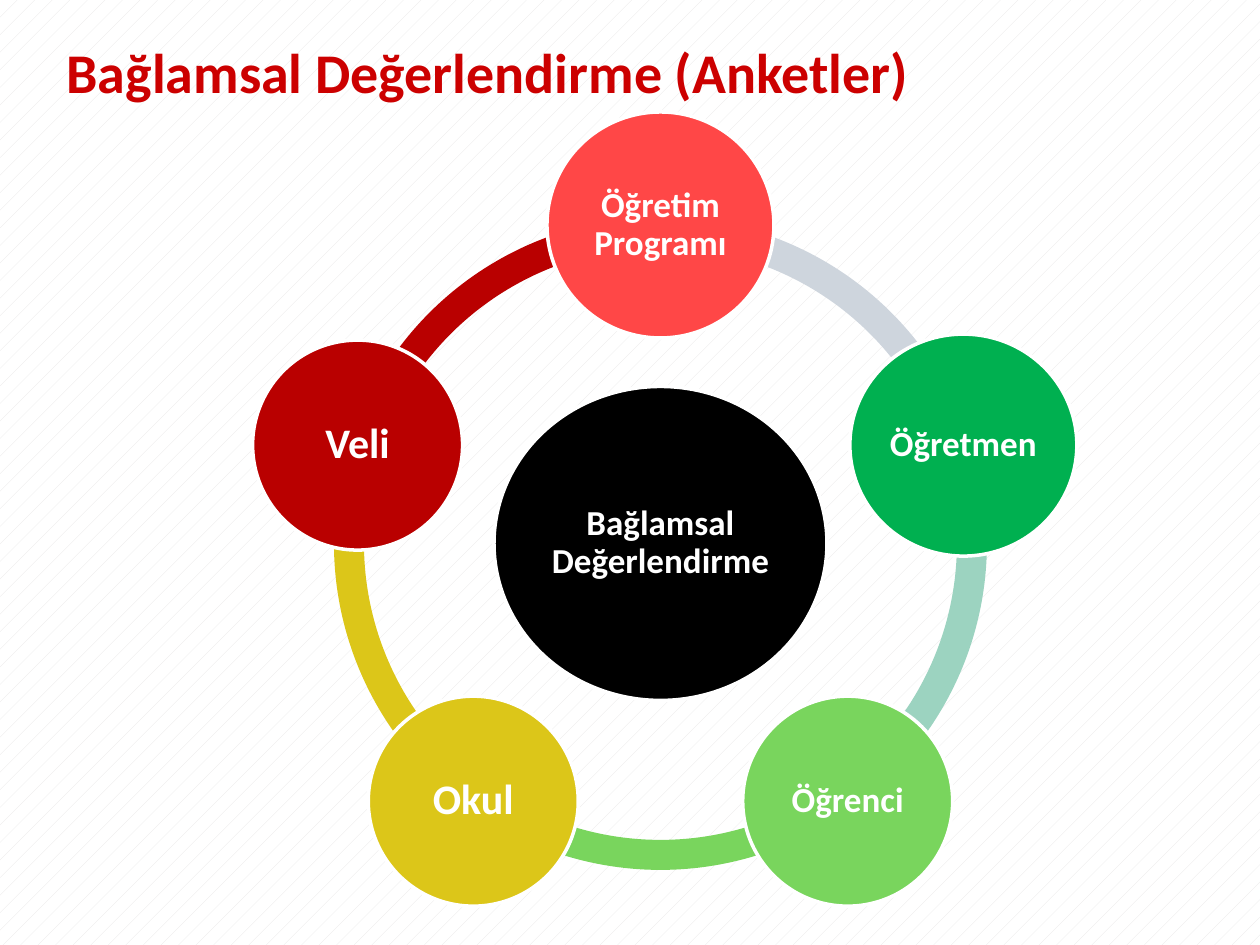
from math import cos, radians, sin

from pptx import Presentation
from pptx.dml.color import RGBColor
from pptx.enum.dml import MSO_PATTERN
from pptx.enum.shapes import MSO_SHAPE
from pptx.enum.text import MSO_ANCHOR, MSO_AUTO_SIZE, PP_ALIGN
from pptx.util import Pt

PX = 914400 / 126
FONT = "Calibri"
OVAL, ARC = MSO_SHAPE.OVAL, MSO_SHAPE.BLOCK_ARC
MIDDLE, LEFT, CENTER = MSO_ANCHOR.MIDDLE, PP_ALIGN.LEFT, PP_ALIGN.CENTER

WHITE = RGBColor(0xFF, 0xFF, 0xFF)
BLACK = RGBColor(0x00, 0x00, 0x00)
PALE_GRAY = RGBColor(0xE7, 0xE6, 0xE6)
TITLE_RED = RGBColor(0xCC, 0x00, 0x00)
CORAL = RGBColor(0xFF, 0x47, 0x47)
GREEN = RGBColor(0x00, 0xB0, 0x50)
LIME = RGBColor(0x79, 0xD5, 0x5D)
YELLOW = RGBColor(0xDC, 0xC6, 0x19)
DARK_RED = RGBColor(0xB9, 0x00, 0x00)
MINT = RGBColor(0x9C, 0xD3, 0xC0)
SILVER = RGBColor(0xCE, 0xD5, 0xDD)

# Clockwise from the top: label, width, height, text size, fill, arc to the next
NODES = [
    ("Öğretim Programı", 227, 226, 20, CORAL, SILVER),
    ("Öğretmen", 227, 222, 20, GREEN, MINT),
    ("Öğrenci", 210, 210, 20, LIME, LIME),
    ("Okul", 210, 210, 24, YELLOW, YELLOW),
    ("Veli", 210, 210, 24, DARK_RED, DARK_RED),
]


def px(*lengths):
    return [round(length * PX) for length in lengths]


def write(frame, text, size, color, align):
    frame.text = text
    frame.word_wrap = True
    frame.auto_size = MSO_AUTO_SIZE.NONE
    frame.vertical_anchor = MIDDLE
    para = frame.paragraphs[0]
    para.alignment = align
    para.line_spacing = 0.9
    font = para.runs[0].font
    font.name, font.size, font.bold = FONT, Pt(size), True
    font.color.rgb = color


def add_filled(group, kind, center_x, center_y, width, height, color):
    shape = group.shapes.add_shape(
        kind, *px(center_x - width / 2, center_y - height / 2, width, height))
    shape.shadow.inherit = False
    shape.fill.solid()
    shape.fill.fore_color.rgb = color
    shape.line.fill.background()
    return shape


def add_circle(group, center_x, center_y, width, height, color, label, size):
    circle = add_filled(group, OVAL, center_x, center_y, width, height, color)
    circle.line.color.rgb = WHITE
    circle.line.width = Pt(2)
    frame = circle.text_frame
    frame.margin_left, frame.margin_top, frame.margin_right, frame.margin_bottom = px(4, 4, 4, 4)
    write(frame, label, size, WHITE, CENTER)


def add_background(page):
    fill = page.background.fill
    fill.patterned()
    fill.pattern = MSO_PATTERN.PERCENT_5
    fill.fore_color.rgb = PALE_GRAY
    fill.back_color.rgb = WHITE


def add_title(page, left, top, width, height):
    title = page.shapes.title
    title.left, title.top, title.width, title.height = px(left, top, width, height)
    write(title.text_frame, "Bağlamsal Değerlendirme (Anketler)", 32, TITLE_RED, LEFT)


def add_cycle(page, left, top, diameter):
    group = page.shapes.add_group_shape()
    center_x, center_y = left + diameter / 2, top + diameter / 2
    step = 360 / len(NODES)
    angles = [(270 + step * index) % 360 for index in range(len(NODES))]

    # Ring: one arc from each node to the next
    for angle, (*_, arc_color) in reversed(list(zip(angles, NODES))):
        arc = add_filled(group, ARC, center_x, center_y, diameter, diameter, arc_color)
        # Angles are stored as 60000ths of a degree, adjustments as 100000ths
        arc.adjustments[0] = angle * 0.6
        arc.adjustments[1] = (angle + step) % 360 * 0.6
        arc.adjustments[2] = 0.046

    # Hub and the nodes around it
    add_circle(group, center_x, center_y, 333, 314, BLACK, "Bağlamsal Değerlendirme", 20)
    orbit = diameter / 2 - 8
    for angle, (label, width, height, size, color, _) in zip(angles, NODES):
        add_circle(group, center_x + orbit * cos(radians(angle)),
                   center_y + orbit * sin(radians(angle)),
                   width, height, color, label, size)


def main():
    deck = Presentation()
    deck.slide_width, deck.slide_height = px(1260, 945)
    page = deck.slides.add_slide(deck.slide_layouts[5])
    add_background(page)
    add_title(page, 54, 37, 1002, 76)
    add_cycle(page, 334, 217, 653)
    deck.save("out.pptx")


if __name__ == "__main__":
    main()
